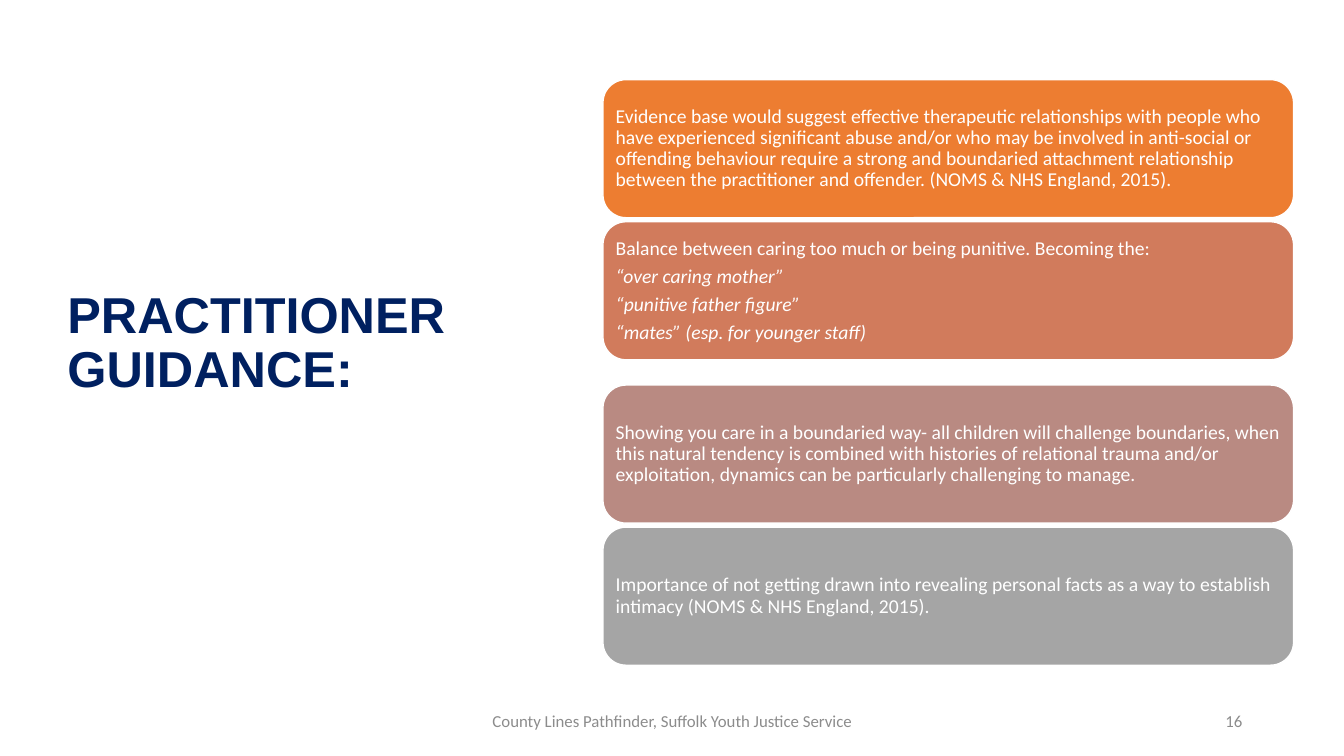
from dataclasses import dataclass

from pptx import Presentation
from pptx.dml.color import RGBColor
from pptx.enum.shapes import MSO_SHAPE as Shape
from pptx.enum.text import MSO_ANCHOR as Anchor, PP_ALIGN as Align
from pptx.util import Inches, Pt


@dataclass(frozen=True)
class Theme:
    heading_font: str = "Arial"
    body_font: str = "Calibri"
    navy: str = "002060"
    grey: str = "8C8C8C"
    white: str = "FFFFFF"
    cards: tuple = ("ED7D31", "D17B5C", "B98A82", "A5A5A5")
    title_size: float = 36
    card_size: float = 14
    footer_size: float = 12


def write(frame, lines, *, font, size, color, bold=False, italic_from=None,
          align=Align.LEFT, spacing=1.0, after=0, insets=(0.1, 0.05, 0.1, 0.05)):
    """Fill a text frame, one paragraph per line; italics start at italic_from."""
    frame.word_wrap = True
    frame.vertical_anchor = Anchor.MIDDLE
    (frame.margin_left, frame.margin_top,
     frame.margin_right, frame.margin_bottom) = map(Inches, insets)
    for index, line in enumerate(lines):
        paragraph = frame.paragraphs[0] if index == 0 else frame.add_paragraph()
        paragraph.alignment = align
        paragraph.line_spacing = spacing
        paragraph.space_after = Pt(after)
        run = paragraph.add_run()
        run.text = line
        run.font.name = font
        run.font.size = Pt(size)
        run.font.bold = bold
        run.font.italic = italic_from is not None and index >= italic_from
        run.font.color.rgb = RGBColor.from_string(color)


class SlideBuilder:
    def __init__(self, slide, theme):
        self.slide = slide
        self.theme = theme

    def text(self, lines, left, top, width, height, **style):
        box = self.slide.shapes.add_textbox(
            Inches(left), Inches(top), Inches(width), Inches(height))
        write(box.text_frame, lines, **style)

    def title(self, words, left, top, width, height):
        # The deep bottom inset lifts the heading above the middle
        self.text([words], left, top, width, height,
                  font=self.theme.heading_font, size=self.theme.title_size,
                  color=self.theme.navy, bold=True, spacing=0.9,
                  insets=(0.1, 0.05, 0.1, 0.6))

    def footer(self, words, left, width, align):
        self.text([words], left, 6.95, width, 0.4,
                  font=self.theme.body_font, size=self.theme.footer_size,
                  color=self.theme.grey, align=align, after=6)

    def card(self, lines, left, top, width, height, fill):
        card = self.slide.shapes.add_shape(
            Shape.ROUNDED_RECTANGLE,
            Inches(left), Inches(top), Inches(width), Inches(height))
        card.shadow.inherit = False
        card.fill.solid()
        card.fill.fore_color.rgb = RGBColor.from_string(fill)
        card.line.color.rgb = RGBColor.from_string(self.theme.white)
        card.line.width = Pt(1)
        write(card.text_frame, lines,
              font=self.theme.body_font, size=self.theme.card_size,
              color=self.theme.white, italic_from=1, spacing=0.9,
              after=0.35 * self.theme.card_size, insets=(0.06,) * 4)


GUIDANCE = [
    ["Evidence base would suggest effective therapeutic relationships with people "
     "who have experienced significant abuse and/or who may be involved in "
     "anti-social or offending behaviour require a strong and boundaried attachment "
     "relationship between the practitioner and offender. (NOMS & NHS England, 2015)."],
    ["Balance between caring too much or being punitive. Becoming the:",
     "“over caring mother”",
     "“punitive father figure”",
     "“mates” (esp. for younger staff)"],
    ["Showing you care in a boundaried way- all children will challenge boundaries, "
     "when this natural tendency is combined with histories of relational trauma "
     "and/or exploitation, dynamics can be particularly challenging to manage."],
    ["Importance of not getting drawn into revealing personal facts as a way to "
     "establish intimacy (NOMS & NHS England, 2015)."],
]


def main():
    deck = Presentation()
    deck.slide_width, deck.slide_height = Inches(13.33), Inches(7.5)
    theme = Theme()
    page = SlideBuilder(deck.slides.add_slide(deck.slide_layouts[6]), theme)

    # Heading
    page.title("PRACTITIONER GUIDANCE:", 0.57, 0.68, 4.16, 6.02)

    # Footer
    page.footer("County Lines Pathfinder, Suffolk Youth Justice Service",
                4.42, 4.5, Align.CENTER)
    page.footer("16", 9.42, 3, Align.RIGHT)

    # Guidance cards: two pairs with a wider gap between them
    card_height, gap, pair_gap = 1.37, 0.04, 0.21
    for index, (lines, fill) in enumerate(zip(GUIDANCE, theme.cards)):
        top = 0.79 + index * (card_height + gap) + index // 2 * pair_gap
        page.card(lines, 5.98, top, 6.85, card_height, fill)

    deck.save("out.pptx")


if __name__ == "__main__":
    main()
